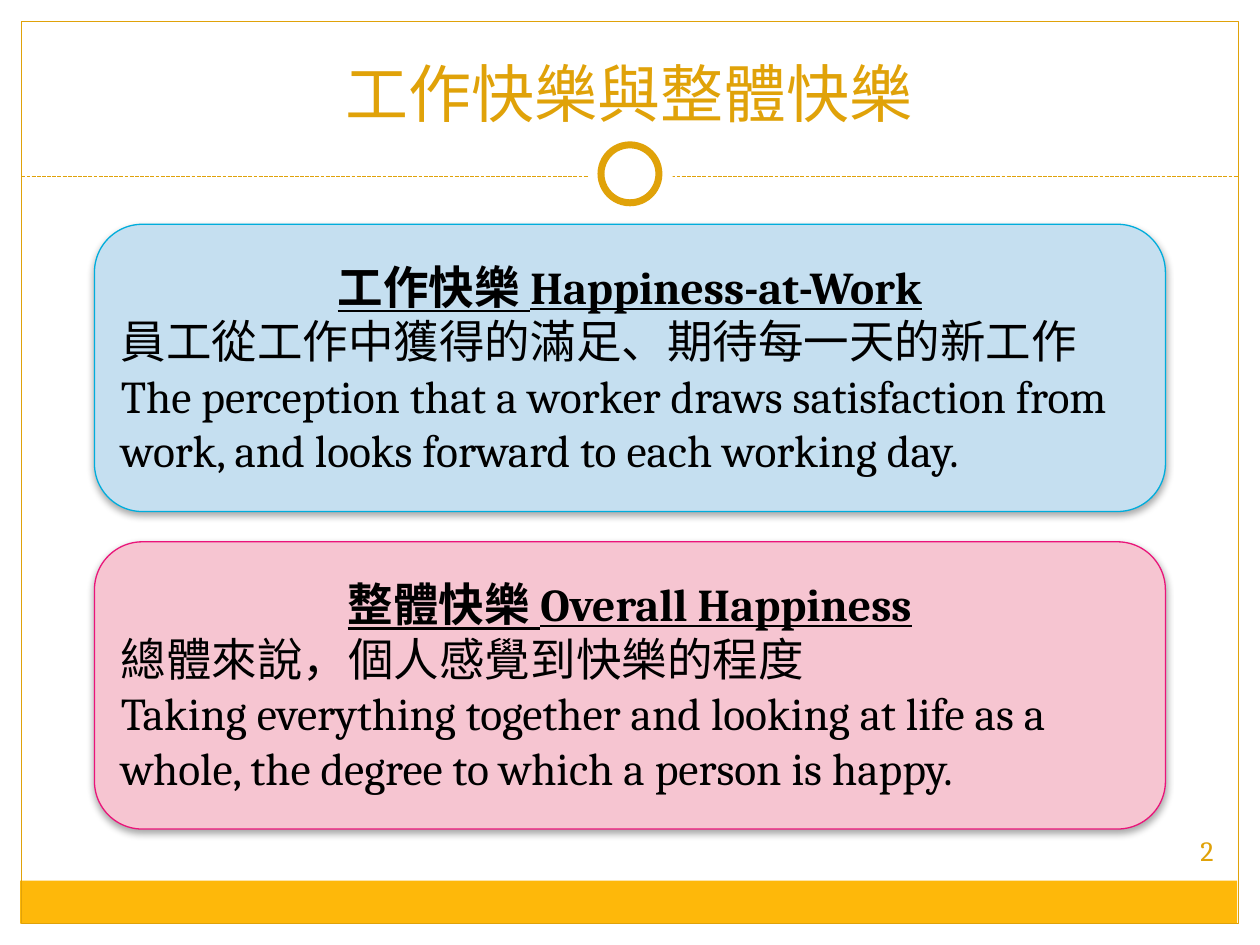
from lxml.etree import SubElement
from pptx import Presentation
from pptx.dml.color import RGBColor
from pptx.enum.dml import MSO_LINE
from pptx.enum.shapes import MSO_CONNECTOR, MSO_SHAPE
from pptx.enum.text import MSO_ANCHOR, PP_ALIGN
from pptx.oxml import parse_xml
from pptx.oxml.ns import qn
from pptx.util import Inches, Pt

COLORS = {
    "white": "FFFFFF", "black": "000000", "gold": "E0A209", "band": "FEB80A",
    "sky": "C5DFF0", "blue": "00ADDC", "rose": "F6C5D1", "pink": "EA157A",
}
HAN, LATIN = "Noto Sans CJK SC", "Cambria"
SHADOW = (
    '<a:effectLst xmlns:a="http://schemas.openxmlformats.org/drawingml/2006/main">'
    '<a:outerShdw blurRad="50800" dist="25400" dir="5400000" rotWithShape="0">'
    '<a:srgbClr val="000000"><a:alpha val="35000"/></a:srgbClr>'
    '</a:outerShdw></a:effectLst>'
)


def set_face(font, name):
    """Use one typeface for both Latin and East Asian text."""
    font.name = name
    SubElement(font._element, qn("a:ea")).set("typeface", name)


def add_shape(kind, box, fill=None, line=None, width=0.75):
    shape = slide.shapes.add_shape(kind, *map(Inches, box))
    shape.shadow.inherit = False
    if fill:
        shape.fill.solid()
        shape.fill.fore_color.rgb = RGBColor.from_string(COLORS[fill])
    else:
        shape.fill.background()
    if line:
        shape.line.color.rgb = RGBColor.from_string(COLORS[line])
        shape.line.width = Pt(width)
    else:
        shape.line.fill.background()
    return shape


prs = Presentation()
prs.slide_width, prs.slide_height = Inches(10), Inches(7.5)
slide = prs.slides.add_slide(prs.slide_layouts[5])
gold = RGBColor.from_string(COLORS["gold"])

# Frame, bottom band, dashed rule and ring
add_shape(MSO_SHAPE.RECTANGLE, (0.16, 6.99, 9.66, 0.34), "band")
add_shape(MSO_SHAPE.RECTANGLE, (0.17, 0.17, 9.66, 7.16), line="gold")
rule = slide.shapes.add_connector(
    MSO_CONNECTOR.STRAIGHT, Inches(0.17), Inches(1.4), Inches(9.83), Inches(1.4))
rule.line.color.rgb = gold
rule.line.width = Pt(0.75)
rule.line.dash_style = MSO_LINE.SQUARE_DOT
SubElement(rule._element.spPr, qn("a:effectLst"))
add_shape(MSO_SHAPE.OVAL, (4.67, 1.05, 0.67, 0.67), "white")
add_shape(MSO_SHAPE.OVAL, (4.77, 1.15, 0.46, 0.46), "white", "gold", 4)

# Title
title = slide.shapes.title
title.left, title.top = Inches(0.33), Inches(0.25)
title.width, title.height = Inches(9.33), Inches(0.83)
title.text_frame.text = "工作快樂與整體快樂"
title.text_frame.vertical_anchor = MSO_ANCHOR.BOTTOM
para = title.text_frame.paragraphs[0]
para.alignment = PP_ALIGN.CENTER
para.font.size = Pt(36)
para.font.color.rgb = gold
set_face(para.font, HAN)

# Definition cards
cards = [
    ("sky", "blue", "工作快樂 ", "Happiness-at-Work",
     "員工從工作中獲得的滿足、期待每一天的新工作",
     "The perception that a worker draws satisfaction from work, "
     "and looks forward to each working day."),
    ("rose", "pink", "整體快樂 ", "Overall Happiness",
     "總體來說，個人感覺到快樂的程度",
     "Taking everything together and looking at life as a whole, "
     "the degree to which a person is happy."),
]
for i, (fill, line, term, english, han, latin) in enumerate(cards):
    card = add_shape(MSO_SHAPE.ROUNDED_RECTANGLE,
                     (0.75, 1.78 + i * 2.52, 8.5, 2.28), fill, line)
    props = card._element.spPr
    props.replace(props.find(qn("a:effectLst")), parse_xml(SHADOW))
    frame = card.text_frame
    frame.word_wrap = True
    frame.vertical_anchor = MSO_ANCHOR.MIDDLE
    rows = [[(term, HAN), (english, LATIN)], [(han, HAN)], [(latin, LATIN)]]
    for n, row in enumerate(rows):
        para = frame.add_paragraph() if n else frame.paragraphs[0]
        para.alignment = PP_ALIGN.LEFT if n else PP_ALIGN.CENTER
        para.font.size = Pt(26)
        para.font.bold = para.font.underline = n == 0
        para.font.color.rgb = RGBColor.from_string(COLORS["black"])
        for text, face in row:
            run = para.add_run()
            run.text = text
            set_face(run.font, face)

# Page number
page = slide.shapes.add_textbox(Inches(9.33), Inches(6.51), Inches(0.5), Inches(0.48))
frame = page.text_frame
frame.word_wrap = True
frame.vertical_anchor = MSO_ANCHOR.MIDDLE
frame.margin_left = frame.margin_right = Inches(0.05)
frame.text = "2"
para = frame.paragraphs[0]
para.alignment = PP_ALIGN.CENTER
para.font.size = Pt(16)
para.font.color.rgb = gold
set_face(para.font, LATIN)

prs.save("out.pptx")
